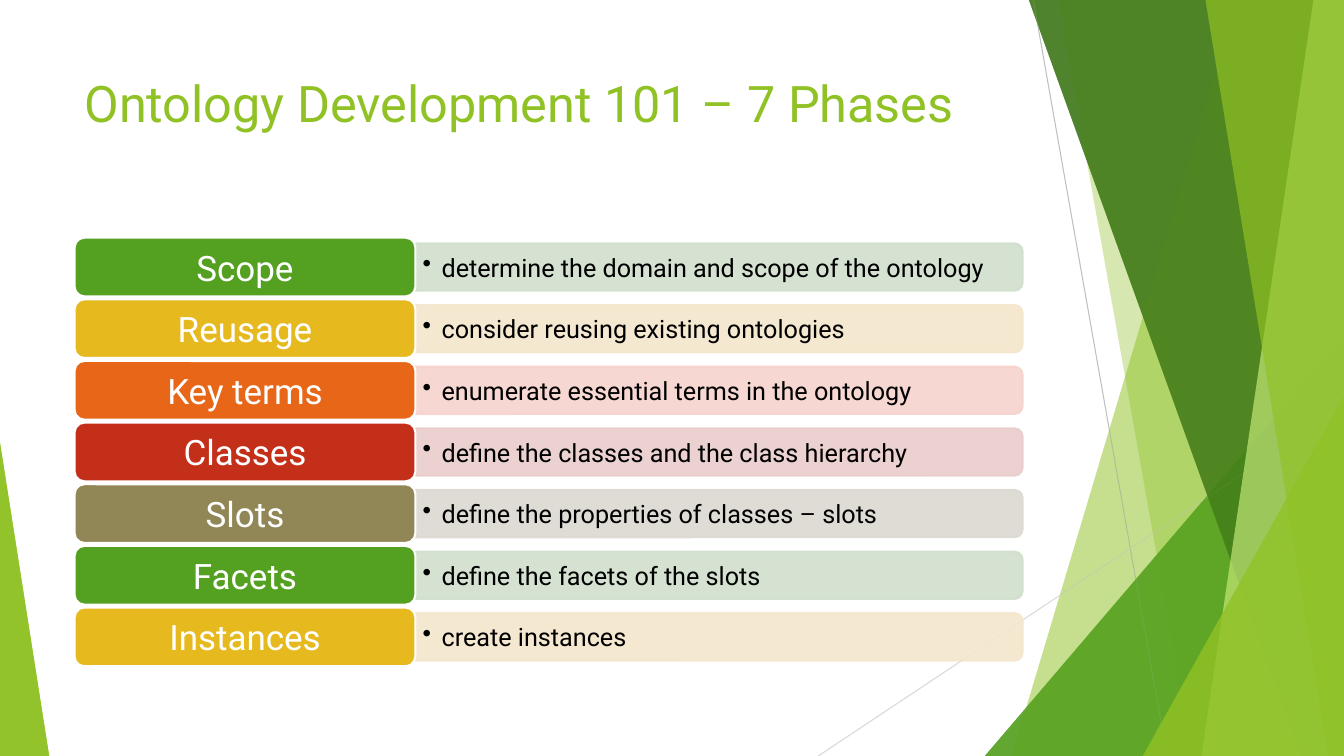
from collections import namedtuple
from itertools import cycle

from pptx import Presentation
from pptx.dml.color import RGBColor
from pptx.enum.shapes import MSO_CONNECTOR, MSO_SHAPE
from pptx.enum.text import MSO_ANCHOR, PP_ALIGN
from pptx.oxml.ns import qn
from pptx.oxml.xmlchemy import OxmlElement as make_element
from pptx.util import Cm, Pt

FONT = "Roboto"
WHITE = RGBColor(0xFF, 0xFF, 0xFF)
BLACK = RGBColor(0x00, 0x00, 0x00)
LIME = RGBColor(0x90, 0xC2, 0x26)
PALE_LIME = RGBColor(0xC0, 0xE4, 0x74)
GREEN = RGBColor(0x54, 0xA0, 0x21)
DARK_GREEN = RGBColor(0x3F, 0x78, 0x19)
GOLD = RGBColor(0xE6, 0xB9, 0x1E)
ORANGE = RGBColor(0xE7, 0x66, 0x18)
RED = RGBColor(0xC4, 0x2F, 0x1A)
OLIVE = RGBColor(0x91, 0x86, 0x55)
PALE_GREEN = RGBColor(0xD1, 0xDF, 0xCD)
PALE_GOLD = RGBColor(0xF5, 0xE6, 0xCD)
PALE_ORANGE = RGBColor(0xF6, 0xD3, 0xCC)
PALE_RED = RGBColor(0xEA, 0xCD, 0xCD)
PALE_OLIVE = RGBColor(0xDC, 0xD9, 0xD1)
GREY = RGBColor(0xBF, 0xBF, 0xBF)
LIGHT_GREY = RGBColor(0xD9, 0xD9, 0xD9)

# All boxes are in centimetres
Box = namedtuple("Box", "left top width height")
SLIDE = Box(0, 0, 33.87, 19.05)
TITLE = Box(1.88, 1.7, 23.88, 3.66)
PHASE_LIST = Box(1.88, 5.99, 23.89, 10.8)

# Bands reach the right edge: x of top left corner, x of bottom left corner
# Triangles stand on the bottom edge: left, width, height, apex position
FACETS = [
    ("band", (31.19, 25.5), LIME, 30),
    ("band", (26.67, 30.05), LIME, 20),
    ("triangle", (24.82, 9.05, 10.59, 1), GREEN, 72),
    ("band", (25.93, 32.79), DARK_GREEN, 70),
    ("band", (33.1, 30.28), PALE_LIME, 70),
    ("band", (30.38, 33.48), LIME, 65),
    ("triangle", (28.8, 5.07, 9.07, 1), LIME, 80),
    ("triangle", (0, 1.24, 7.9, 0), LIME, 85),
]
RAYS = [
    ((26.04, 0), (29.41, 19.05), GREY),
    ((33.87, 10.24), (20.62, 19.05), LIGHT_GREY),
]
PHASES = [
    ("Scope", "determine the domain and scope of the ontology"),
    ("Reusage", "consider reusing existing ontologies"),
    ("Key terms", "enumerate essential terms in the ontology"),
    ("Classes", "define the classes and the class hierarchy"),
    ("Slots", "define the properties of classes – slots"),
    ("Facets", "define the facets of the slots"),
    ("Instances", "create instances"),
]
PHASE_COLORS = [(GREEN, PALE_GREEN), (GOLD, PALE_GOLD), (ORANGE, PALE_ORANGE),
                (RED, PALE_RED), (OLIVE, PALE_OLIVE)]


def lengths(box):
    return [Cm(value) for value in box]


def paint(shape, color, opacity=100, line=None):
    shape.shadow.inherit = False
    shape.fill.solid()
    shape.fill.fore_color.rgb = color
    if line is None:
        shape.line.fill.background()
    else:
        shape.line.color.rgb = line
        shape.line.width = Pt(1.5)
    if opacity < 100:
        for color_element in shape.element.spPr.iter(qn("a:srgbClr")):
            alpha = make_element("a:alpha")
            alpha.set("val", str(opacity * 1000))
            color_element.append(alpha)


def write(shape, text, size, color, anchor, insets=(0.25, 0.13)):
    frame = shape.text_frame
    frame.text = text
    frame.word_wrap = True
    frame.vertical_anchor = anchor
    frame.margin_left = frame.margin_right = Cm(insets[0])
    frame.margin_top = frame.margin_bottom = Cm(insets[1])
    paragraph = frame.paragraphs[0]
    font = paragraph.runs[0].font
    font.name, font.size, font.color.rgb = FONT, Pt(size), color
    return paragraph


def add_bullet(paragraph):
    properties = paragraph._p.get_or_add_pPr()
    properties.set("marL", str(Cm(0.48)))
    properties.set("indent", str(-Cm(0.48)))
    bullet = make_element("a:buChar")
    bullet.set("char", "•")
    properties.append(bullet)


def add_facets(slide, box):
    right, bottom = box.left + box.width, box.top + box.height
    for kind, geometry, color, opacity in FACETS:
        if kind == "band":
            top_x, bottom_x = (box.left + x for x in geometry)
            builder = slide.shapes.build_freeform(Cm(top_x), Cm(box.top))
            corners = [(right, box.top), (right, bottom), (bottom_x, bottom)]
            builder.add_line_segments([(Cm(x), Cm(y)) for x, y in corners])
            shape = builder.convert_to_shape()
        else:
            left, width, height, apex = geometry
            place = Box(box.left + left, bottom - height, width, height)
            shape = slide.shapes.add_shape(
                MSO_SHAPE.ISOSCELES_TRIANGLE, *lengths(place))
            shape.adjustments[0] = apex
        paint(shape, color, opacity)


def add_rays(slide, box):
    for start, end, color in RAYS:
        points = [Cm(value + offset) for point in (start, end)
                  for value, offset in zip(point, (box.left, box.top))]
        ray = slide.shapes.add_connector(MSO_CONNECTOR.STRAIGHT, *points)
        ray.line.color.rgb = color
        ray.line.width = Pt(0.75)
        ray.element.spPr.append(make_element("a:effectLst"))


def add_title(slide, box):
    title = slide.shapes.add_textbox(*lengths(box))
    write(title, "Ontology Development 101 – 7 Phases", 36, LIME, MSO_ANCHOR.TOP)


def add_phase(slide, box, name, task, color, pale_color):
    label_width, bar_height = 8.59, 1.19
    bar_left = box.left + label_width
    bar_width = box.width - label_width
    middle = box.top + box.height / 2

    # Description bar, turned so that its round corners face right
    upright = Box(bar_left + (bar_width - bar_height) / 2,
                  middle - bar_width / 2, bar_height, bar_width)
    bar = slide.shapes.add_shape(
        MSO_SHAPE.ROUND_2_SAME_RECTANGLE, *lengths(upright))
    bar.rotation = 90
    paint(bar, pale_color, 90, line=pale_color)

    # Description text
    area = Box(bar_left, middle - bar_height / 2, bar_width, bar_height)
    description = slide.shapes.add_textbox(*lengths(area))
    add_bullet(write(description, task, 18, BLACK, MSO_ANCHOR.MIDDLE, (0.18, 0.1)))

    # Phase label
    label = slide.shapes.add_shape(
        MSO_SHAPE.ROUNDED_RECTANGLE, *lengths(box._replace(width=label_width)))
    paint(label, color, line=WHITE)
    paragraph = write(label, name, 25, WHITE, MSO_ANCHOR.MIDDLE)
    paragraph.alignment = PP_ALIGN.CENTER


def add_phase_list(slide, box):
    row_height = 1.48
    pitch = (box.height - row_height) / (len(PHASES) - 1)
    for row, (phase, colors) in enumerate(zip(PHASES, cycle(PHASE_COLORS))):
        place = box._replace(top=box.top + row * pitch, height=row_height)
        add_phase(slide, place, *phase, *colors)


def main():
    presentation = Presentation()
    presentation.slide_width = Cm(SLIDE.width)
    presentation.slide_height = Cm(SLIDE.height)
    slide = presentation.slides.add_slide(presentation.slide_layouts[6])
    # Two facet layers with the rays between them deepen the colours
    add_facets(slide, SLIDE)
    add_rays(slide, SLIDE)
    add_facets(slide, SLIDE)
    add_title(slide, TITLE)
    add_phase_list(slide, PHASE_LIST)
    presentation.save("out.pptx")


if __name__ == "__main__":
    main()
